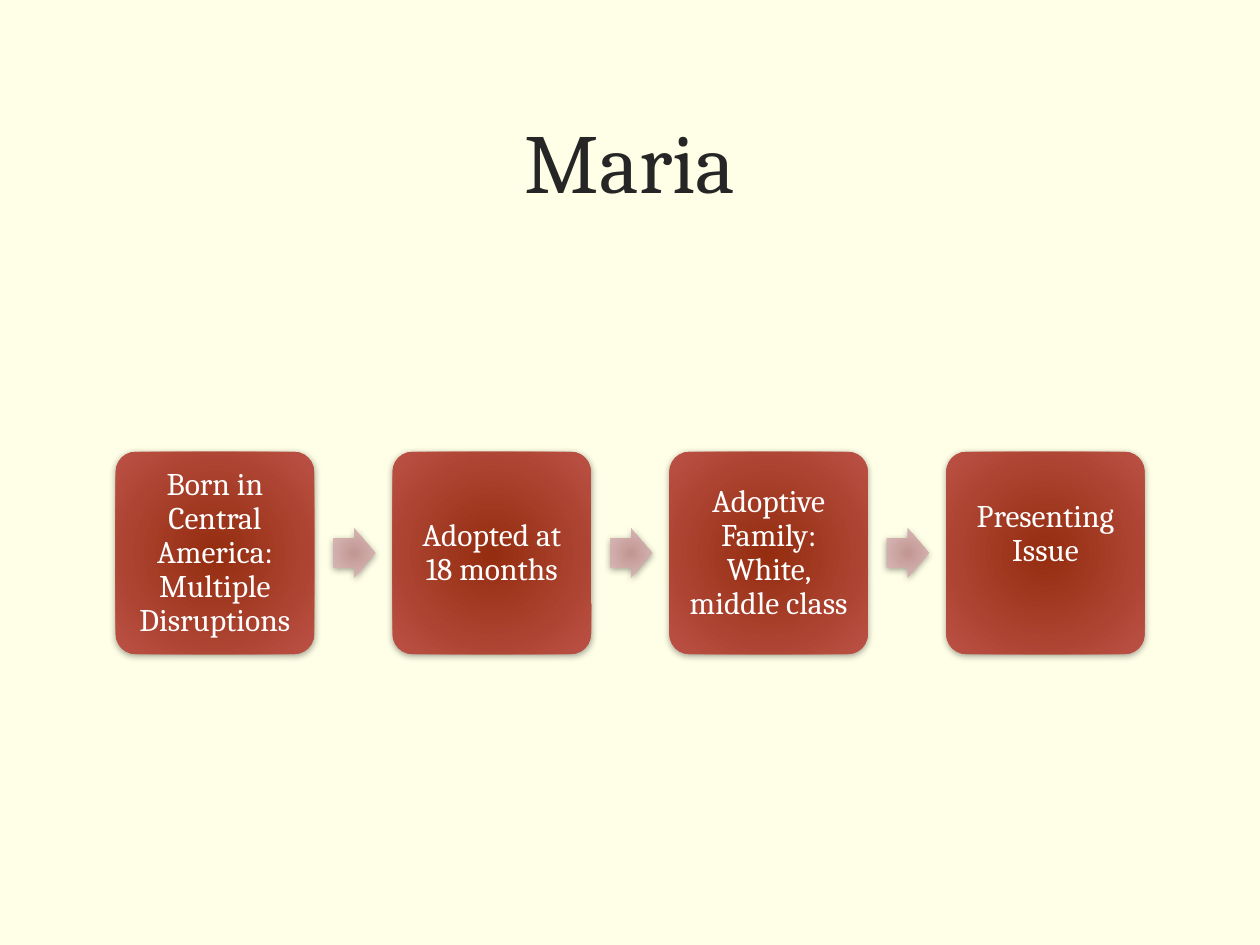
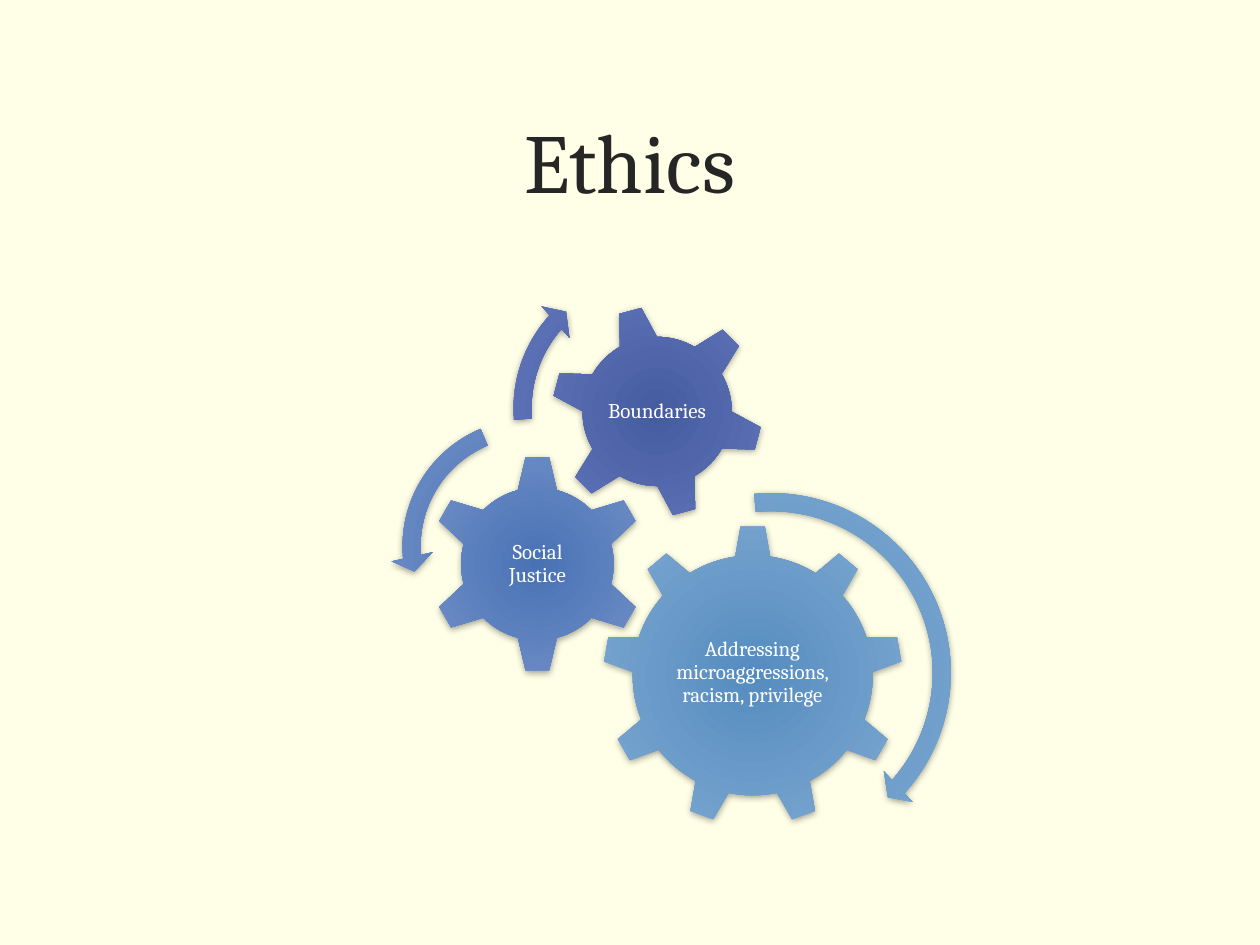
from pptx import Presentation
from pptx.dml.color import RGBColor
from pptx.enum.shapes import MSO_SHAPE
from pptx.enum.text import MSO_ANCHOR, MSO_AUTO_SIZE, PP_ALIGN
from pptx.oxml import parse_xml
from pptx.oxml.ns import nsdecls, qn
from pptx.util import Pt

BOX = MSO_SHAPE.ROUNDED_RECTANGLE
ARROW = MSO_SHAPE.RIGHT_ARROW
GEAR6 = MSO_SHAPE.GEAR_6
GEAR9 = MSO_SHAPE.GEAR_9
CLOCK = MSO_SHAPE.CIRCULAR_ARROW
COUNTER = MSO_SHAPE.LEFT_CIRCULAR_ARROW
MIDDLE = MSO_ANCHOR.MIDDLE
CENTER = PP_ALIGN.CENTER
NO_FIT = MSO_AUTO_SIZE.NONE

FONT = "Cambria"
CREAM, INK, WHITE = "FFFEE6", "262626", "FFFFFF"
RED = ("952D10", "BA5145")
ROSE = ("C29693", "DBBEBC")
SKY = ("558CBF", "81AAD3")
BLUE = ("4972B4", "7492C9")
INDIGO = ("465CA1", "687BBF")

GLOW = f"""<a:path {nsdecls("a")} path="circle">
<a:fillToRect l="40000" t="100000" r="40000" b="100000"/></a:path>"""
SHADE = f"""<a:outerShdw {nsdecls("a")} blurRad="50800" dist="12700"
 dir="5400000" rotWithShape="0"><a:srgbClr val="000000">
<a:alpha val="37000"/></a:srgbClr></a:outerShdw>"""


def color(code):
    return RGBColor.from_string(code)


def write(frame, text, size, ink=WHITE, inset=None, lead=None, breaks=0):
    frame.word_wrap = True
    frame.auto_size = NO_FIT
    frame.vertical_anchor = MIDDLE
    if inset is not None:
        frame.margin_left = frame.margin_right = Pt(inset)
        frame.margin_top = frame.margin_bottom = Pt(inset)
    para = frame.paragraphs[0]
    para.alignment = CENTER
    if lead:
        para.line_spacing = lead
    run = para.add_run()
    run.text = text
    run.font.name = FONT
    run.font.size = Pt(size)
    run.font.color.rgb = color(ink)
    for _ in range(breaks):
        para.add_line_break()


def start(deck, title):
    slide = deck.slides.add_slide(deck.slide_layouts[5])
    head = slide.shapes.title
    head.left, head.top = Pt(43.5), Pt(34.5)
    head.width, head.height = Pt(633), Pt(114)
    write(head.text_frame, title, 48, INK)
    return slide


def draw(slide, kind, left, top, width, height, tones, adjust=()):
    shape = slide.shapes.add_shape(
        kind, Pt(left), Pt(top), Pt(width), Pt(height))
    for index, value in enumerate(adjust):
        shape.adjustments[index] = value
    shape.fill.gradient()
    for stop, tone in zip(shape.fill.gradient_stops, tones):
        stop.color.rgb = color(tone)
    props = shape.fill._xPr
    grad = props.find(qn("a:gradFill"))
    grad.replace(grad.find(qn("a:lin")), parse_xml(GLOW))
    shape.line.fill.background()
    shape.shadow.inherit = False
    props.find(qn("a:effectLst")).append(parse_xml(SHADE))
    return shape


def label(slide, text, left, top, width, height):
    box = slide.shapes.add_textbox(
        Pt(left), Pt(top), Pt(width), Pt(height))
    write(box.text_frame, text, 12, inset=1.5, lead=0.9)


def gear(slide, kind, left, top, size, tones, turn=0):
    shape = draw(slide, kind, left, top, size, size, tones)
    shape.rotation = turn


def sweep(slide, kind, left, top, size, tones, tip, end, begin):
    band, head = 10.3 / size, 12 / size
    angles = [angle * 0.6 for angle in (tip, end, begin)]
    draw(slide, kind, left, top, size, size, tones, [band, *angles, head])


def flow(slide, steps):
    left, top, wide, high, pitch = 66.1, 258.2, 113.4, 115.6, 158.2
    for index, (text, breaks) in enumerate(steps):
        x = left + index * pitch
        if index:
            draw(slide, ARROW, x - 33.9, top + high / 2 - 14, 24, 28,
                 ROSE, [0.6, 0.5])
        box = draw(slide, BOX, x, top, wide, high, RED, [0.1])
        write(box.text_frame, text, 18, inset=5, lead=0.9, breaks=breaks)


def main():
    deck = Presentation()
    deck.slide_width, deck.slide_height = Pt(720), Pt(540)
    back = deck.slide_master.background.fill
    back.solid()
    back.fore_color.rgb = color(CREAM)

    flow(start(deck, "Maria"), [
        ("Born in Central America: Multiple Disruptions", 0),
        ("Adopted at 18 months", 0),
        ("Adoptive Family: White, middle class", 0),
        ("Presenting Issue", 1),
    ])

    slide = start(deck, "Ethics")
    gear(slide, GEAR9, 344.4, 300.2, 171.4, SKY)
    label(slide, "Addressing microaggressions, racism, privilege",
          378.8, 340.4, 102.4, 88)
    gear(slide, GEAR6, 244.8, 260, 124.6, BLUE)
    label(slide, "Social Justice", 276.2, 291.6, 62, 61.4)
    gear(slide, GEAR6, 314.6, 174.2, 121.8, INDIGO, 345)
    label(slide, "Boundaries", 341.3, 200.9, 68.4, 68.4)
    sweep(slide, CLOCK, 331.2, 275, 219, SKY, 4.98, 41.84, 264.57)
    sweep(slide, COUNTER, 223.2, 232.6, 159, BLUE, 7.17, 174.82, 247.3)
    sweep(slide, CLOCK, 286.6, 147.6, 171.4, INDIGO, 6.57, 221.9, 175.14)

    deck.save("out.pptx")


if __name__ == "__main__":
    main()
